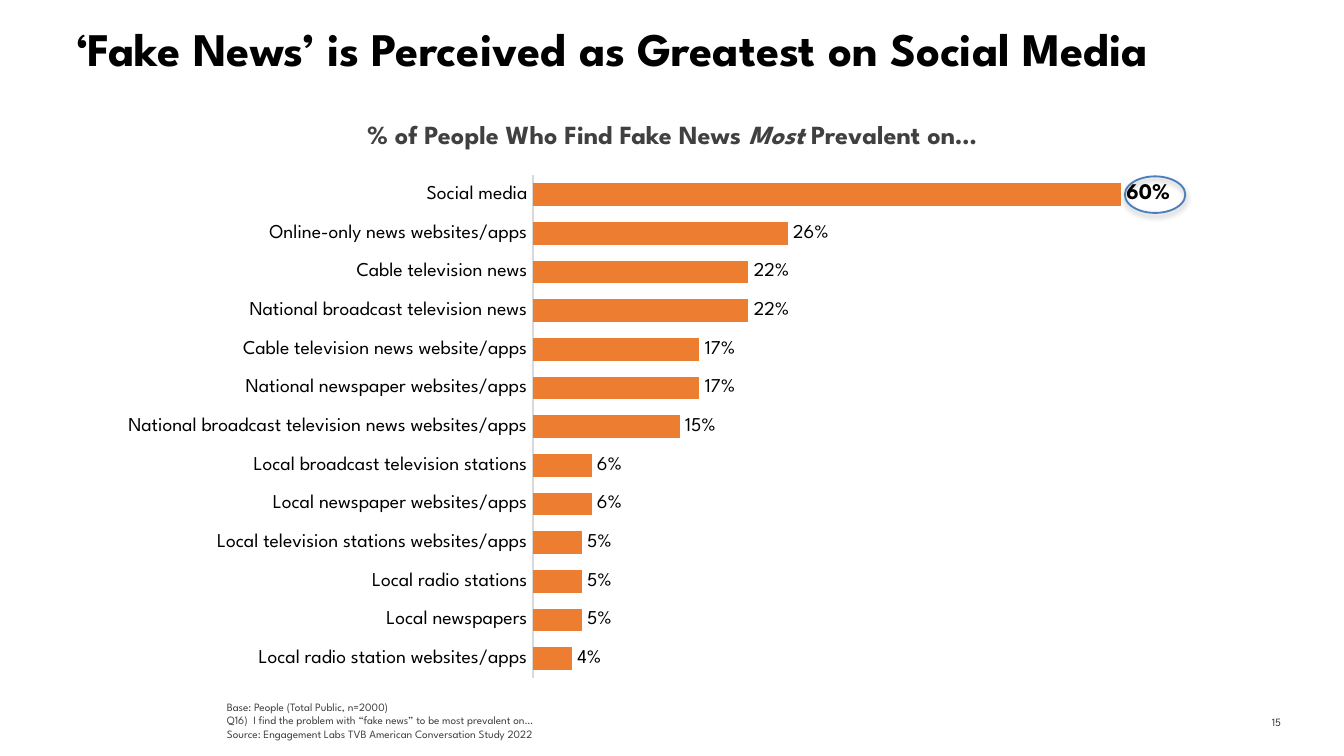
from dataclasses import dataclass

import pptx
import pptx.chart.data
import pptx.dml.color
import pptx.enum.chart
import pptx.enum.shapes
import pptx.enum.text
import pptx.oxml
import pptx.oxml.ns
import pptx.util

Pt = pptx.util.Pt
RGBColor = pptx.dml.color.RGBColor
Align = pptx.enum.text.PP_ALIGN
Anchor = pptx.enum.text.MSO_ANCHOR

FONT = "League Spartan"
BLACK = RGBColor(0x00, 0x00, 0x00)
GRAY = RGBColor(0x40, 0x40, 0x40)
PAGE_GRAY = RGBColor(0x3C, 0x3C, 0x3A)
AXIS_GRAY = RGBColor(0xD9, 0xD9, 0xD9)
ORANGE = RGBColor(0xED, 0x7D, 0x31)
BLUE = RGBColor(0x4B, 0x7E, 0xBC)
PERCENT = "#,##0%"


@dataclass
class Box:
    left: float
    top: float
    width: float
    height: float

    def lengths(self) -> tuple:
        return Pt(self.left), Pt(self.top), Pt(self.width), Pt(self.height)


@dataclass
class Caption:
    box: Box
    paragraphs: list[list[str]]
    size: float
    color: RGBColor
    align: Align = Align.LEFT
    anchor: Anchor = Anchor.TOP
    bold: bool = False
    wrap: bool = True


@dataclass
class Outlet:
    name: str
    share: float


OUTLETS = [
    Outlet("Social media", 0.60),
    Outlet("Online-only news websites/apps", 0.26),
    Outlet("Cable television news", 0.22),
    Outlet("National broadcast television news", 0.22),
    Outlet("Cable television news website/apps", 0.17),
    Outlet("National newspaper websites/apps", 0.17),
    Outlet("National broadcast television news websites/apps", 0.15),
    Outlet("Local broadcast television stations", 0.06),
    Outlet("Local newspaper websites/apps", 0.06),
    Outlet("Local television stations websites/apps", 0.05),
    Outlet("Local radio stations", 0.05),
    Outlet("Local newspapers", 0.05),
    Outlet("Local radio station websites/apps", 0.04),
]

SUBTITLE = Caption(
    Box(169.9, 59.8, 380.2, 24.5),
    [["% of People Who Find Fake News ", "Most", " Prevalent on…"]],
    14, GRAY, Align.CENTER, bold=True, wrap=False)
FOOTNOTES = Caption(
    Box(114.5, 371.5, 542.2, 28.8),
    [["Base: People (Total Public, n=2000)"],
     ["Q16)  I find the problem with “fake news” to be most prevalent on…"],
     ["Source: Engagement Labs TVB American Conversation Study 2022"]],
    6, GRAY, anchor=Anchor.BOTTOM)
PAGE_NUMBER = Caption(Box(650.9, 375.8, 42.5, 21.6), [["15"]], 6, PAGE_GRAY,
                      Align.RIGHT, Anchor.MIDDLE)


def style_font(font, size: float, color: RGBColor, bold: bool = False) -> None:
    font.name = FONT
    font.size = Pt(size)
    font.bold = bold
    font.color.rgb = color


def add_title(slide, text: str) -> None:
    title = slide.shapes.title
    title.left, title.top, title.width, title.height = Box(33.8, 10.8, 661.7, 49).lengths()
    frame = title.text_frame
    frame.text = text
    frame.auto_size = pptx.enum.text.MSO_AUTO_SIZE.NONE
    frame.vertical_anchor = Anchor.TOP
    frame.margin_top = 0
    frame.paragraphs[0].alignment = Align.LEFT
    style_font(frame.paragraphs[0].runs[0].font, 25, BLACK, bold=True)


def add_caption(slide, caption: Caption):
    frame = slide.shapes.add_textbox(*caption.box.lengths()).text_frame
    frame.word_wrap = caption.wrap
    frame.vertical_anchor = caption.anchor
    for index, pieces in enumerate(caption.paragraphs):
        paragraph = frame.add_paragraph() if index else frame.paragraphs[0]
        paragraph.alignment = caption.align
        for piece in pieces:
            run = paragraph.add_run()
            run.text = piece
            style_font(run.font, caption.size, caption.color, caption.bold)
    return frame


def place_plot(chart, x: float, y: float, w: float, h: float) -> None:
    """Fix the inner plot area as fractions of the chart."""
    plot_area = chart._chartSpace.chart.plotArea
    for old in plot_area.findall(pptx.oxml.ns.qn("c:layout")):
        plot_area.remove(old)
    plot_area.insert(0, pptx.oxml.parse_xml(
        f'<c:layout {pptx.oxml.ns.nsdecls("c")}><c:manualLayout>'
        '<c:layoutTarget val="inner"/><c:xMode val="edge"/><c:yMode val="edge"/>'
        f'<c:x val="{x}"/><c:y val="{y}"/><c:w val="{w}"/><c:h val="{h}"/>'
        '</c:manualLayout></c:layout>'))


def add_outlet_chart(slide, outlets: list[Outlet]) -> None:
    figures = pptx.chart.data.CategoryChartData(number_format=PERCENT)
    figures.categories = [outlet.name for outlet in outlets]
    figures.add_series("Series 1", [outlet.share for outlet in outlets])
    chart = slide.shapes.add_chart(
        pptx.enum.chart.XL_CHART_TYPE.BAR_CLUSTERED,
        *Box(36.7, 83.5, 653, 290.2).lengths(), figures).chart
    chart.has_legend = False
    chart.has_title = False
    style_font(chart.font, 10, BLACK)
    place_plot(chart, 0.381, 0.036, 0.563, 0.928)

    # Axes
    outlet_axis = chart.category_axis
    outlet_axis.reverse_order = True
    outlet_axis.major_tick_mark = pptx.enum.chart.XL_TICK_MARK.NONE
    outlet_axis.format.line.color.rgb = AXIS_GRAY
    outlet_axis.format.line.width = Pt(0.75)
    style_font(outlet_axis.tick_labels.font, 10.5, BLACK)
    share_axis = chart.value_axis
    share_axis.minimum_scale = 0
    share_axis.maximum_scale = 0.7
    share_axis.has_major_gridlines = False
    share_axis.visible = False

    # Bars and their labels
    plot = chart.plots[0]
    plot.gap_width = 70
    plot.vary_by_categories = False
    bars = plot.series[0]
    bars.format.fill.solid()
    bars.format.fill.fore_color.rgb = ORANGE
    labels = bars.data_labels
    labels.show_value = True
    labels.number_format = PERCENT
    labels.number_format_is_linked = False
    labels.position = pptx.enum.chart.XL_LABEL_POSITION.OUTSIDE_END
    style_font(labels.font, 10.5, BLACK)
    top_label = bars.points[0].data_label
    style_font(top_label.font, 12, BLACK, bold=True)
    top_label.position = pptx.enum.chart.XL_LABEL_POSITION.OUTSIDE_END


def add_highlight(slide, box: Box) -> None:
    ring = slide.shapes.add_shape(pptx.enum.shapes.MSO_SHAPE.OVAL, *box.lengths())
    ring.fill.background()
    ring.line.color.rgb = BLUE
    ring.line.width = Pt(1)
    ring.shadow.inherit = False
    effects = ring._element.spPr.find(pptx.oxml.ns.qn("a:effectLst"))
    effects.append(pptx.oxml.parse_xml(
        f'<a:outerShdw {pptx.oxml.ns.nsdecls("a")} blurRad="{Pt(3.1)}" dist="{Pt(1.8)}" '
        f'dir="5400000" rotWithShape="0"><a:srgbClr val="{BLACK}">'
        '<a:alpha val="35000"/></a:srgbClr></a:outerShdw>'))


def main() -> None:
    deck = pptx.Presentation()
    deck.slide_width, deck.slide_height = Pt(720), Pt(405)
    slide = deck.slides.add_slide(deck.slide_layouts[5])
    add_caption(slide, PAGE_NUMBER)
    add_outlet_chart(slide, OUTLETS)
    add_title(slide, "‘Fake News’ is Perceived as Greatest on Social Media")
    add_caption(slide, FOOTNOTES)
    subtitle = add_caption(slide, SUBTITLE)
    subtitle.paragraphs[0].runs[1].font.italic = True
    add_highlight(slide, Box(602.6, 94.5, 32.4, 19.6))
    deck.save("out.pptx")


if __name__ == "__main__":
    main()
